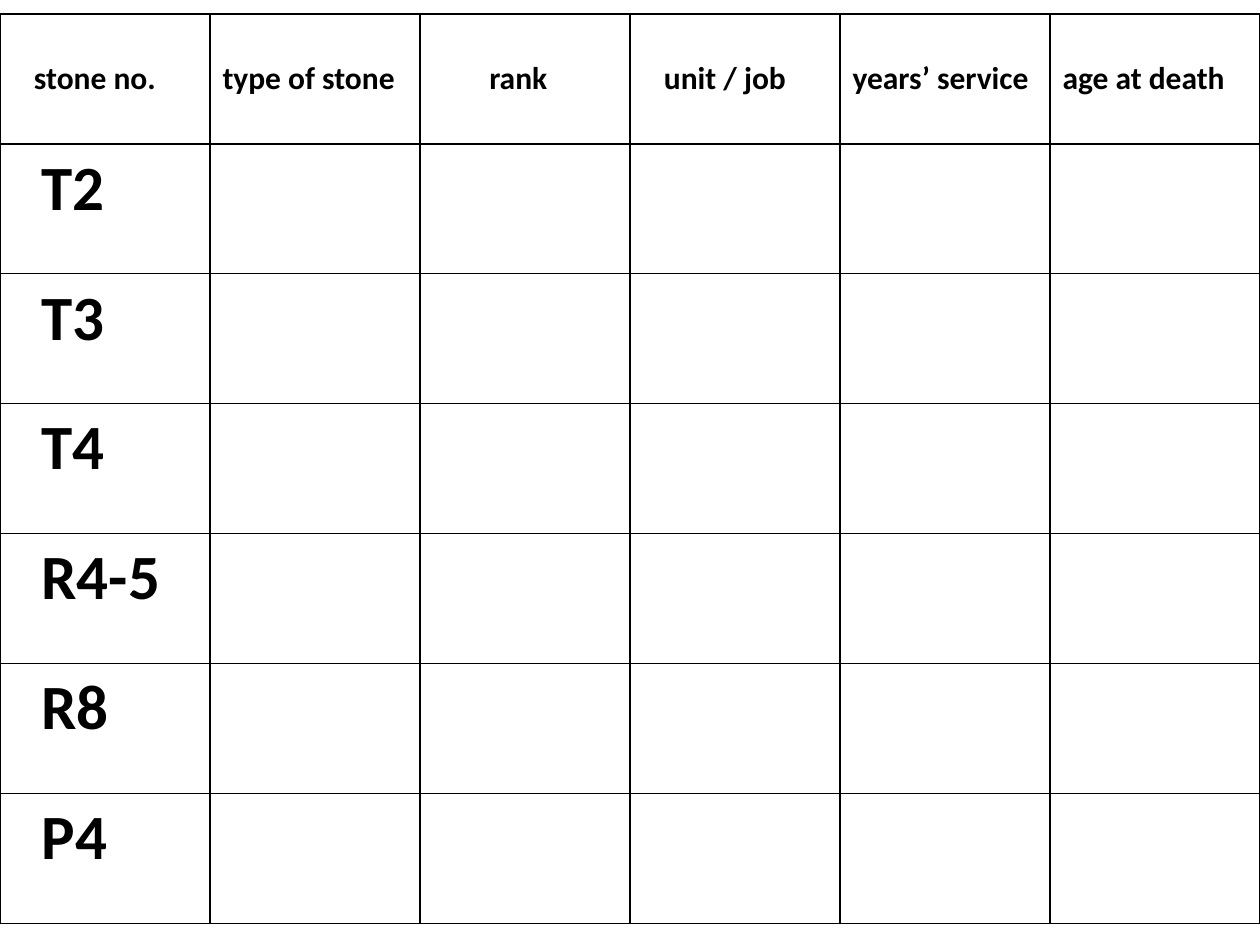
from dataclasses import dataclass

import pptx
import pptx.dml.color
import pptx.enum.text
import pptx.oxml
import pptx.oxml.ns
import pptx.util

Inches = pptx.util.Inches
Pt = pptx.util.Pt

COLORS = {"ink": "000000", "paper": "FFFFFF"}
FONT = "Calibri"
STONE_INDENT = 0.33


@dataclass
class Heading:
    text: str
    indent: float = 0.1


HEADINGS = [
    Heading("stone no.", 0.27),
    Heading("type of stone"),
    Heading("rank", 0.55),
    Heading("unit / job", 0.27),
    Heading("years’ service"),
    Heading("age at death"),
]
STONES = ["T2", "T3", "T4", "R4-5", "R8", "P4"]


def rgb(name: str) -> pptx.dml.color.RGBColor:
    return pptx.dml.color.RGBColor.from_string(COLORS[name])


def style_cell(cell, width: float = 1) -> None:
    """Draw the four borders, then set the fill behind them."""
    tcPr = cell._tc.get_or_add_tcPr()
    for side in ("lnL", "lnR", "lnT", "lnB"):
        tcPr.append(pptx.oxml.parse_xml(
            f'<a:{side} {pptx.oxml.ns.nsdecls("a")} w="{Pt(width)}">'
            f'<a:solidFill><a:srgbClr val="{COLORS["ink"]}"/></a:solidFill>'
            f'</a:{side}>'))
    cell.fill.solid()
    cell.fill.fore_color.rgb = rgb("paper")


def write_cell(cell, text: str, size: float, indent: float) -> None:
    cell.margin_left = Inches(indent)
    cell.margin_right = 0
    cell.text_frame.text = text
    font = cell.text_frame.paragraphs[0].runs[0].font
    font.name = FONT
    font.size = Pt(size)
    font.bold = True
    font.color.rgb = rgb("ink")


def main() -> None:
    prs = pptx.Presentation()
    prs.slide_width, prs.slide_height = Inches(10), Inches(7.5)
    s = prs.slides.add_slide(prs.slide_layouts[6])

    table = s.shapes.add_table(
        len(STONES) + 1, len(HEADINGS),
        0, Inches(0.11), prs.slide_width, Inches(7.22)).table
    table.first_row = False
    table.horz_banding = False
    for cell in table.iter_cells():
        style_cell(cell)

    for col, heading in enumerate(HEADINGS):
        cell = table.cell(0, col)
        write_cell(cell, heading.text, 18, heading.indent)
        cell.vertical_anchor = pptx.enum.text.MSO_ANCHOR.MIDDLE
    for row, stone in enumerate(STONES, start=1):
        write_cell(table.cell(row, 0), stone, 36, STONE_INDENT)

    prs.save("out.pptx")


if __name__ == "__main__":
    main()
